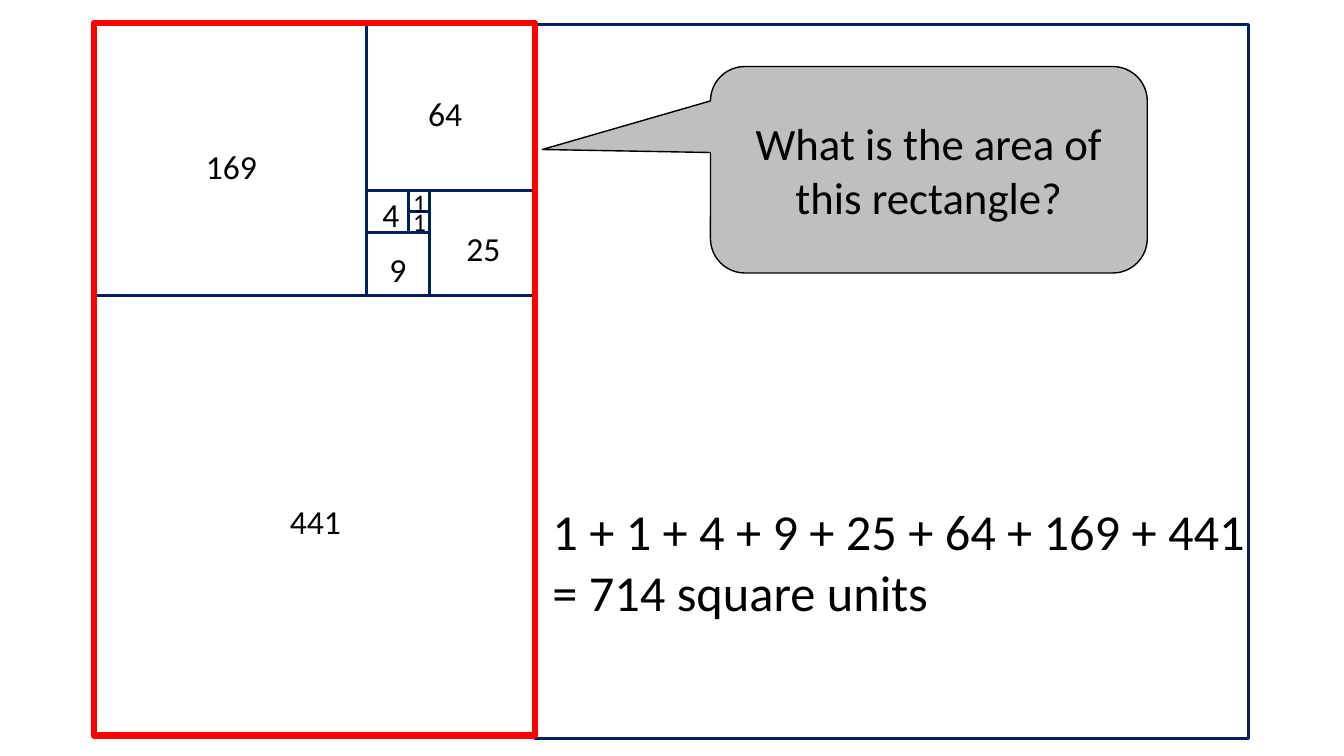
from pptx import Presentation
from pptx.dml.color import RGBColor
from pptx.enum.shapes import MSO_SHAPE
from pptx.enum.text import MSO_ANCHOR, PP_ALIGN
from pptx.util import Pt

RECT = MSO_SHAPE.RECTANGLE
CALLOUT = MSO_SHAPE.ROUNDED_RECTANGULAR_CALLOUT
MIDDLE = MSO_ANCHOR.MIDDLE
LEFT, CENTER = PP_ALIGN.LEFT, PP_ALIGN.CENTER

NAVY, RED, WHITE, GREY, BLACK = "002060", "FF0000", "FFFFFF", "BFBFBF", "000000"
UNIT = 15

# side, column, row, line
SQUARES = [
    (1, 15, 9, RED),
    (1, 15, 8, NAVY),
    (2, 13, 8, NAVY),
    (3, 13, 10, NAVY),
    (5, 16, 8, NAVY),
    (8, 13, 0, NAVY),
    (13, 0, 0, NAVY),
    (21, 0, 13, NAVY),
    (34, 21, 0.1, NAVY),
]
AREA_LABELS = [
    (1, 221, 128, 25, 18, LEFT),
    (1, 221, 114, 25, 18, LEFT),
    (2, 199, 119, 40, 24, LEFT),
    (3, 204, 158, 40, 24, LEFT),
    (5, 259, 143, 56, 24, LEFT),
    (8, 218, 47, 66, 24, CENTER),
    (13, 73, 85, 76, 24, LEFT),
    (21, 133, 338, 76, 24, LEFT),
]


def rgb(value):
    return RGBColor.from_string(value)


def write(sp, text, size, align=LEFT):
    tf = sp.text_frame
    tf.word_wrap = True
    p = tf.paragraphs[0]
    p.alignment = align
    r = p.add_run()
    r.text = text
    for name, value in {"name": "Calibri", "size": Pt(size)}.items():
        setattr(r.font, name, value)
    r.font.color.rgb = rgb(BLACK)


def add_label(s, x, y, w, h, text, size, align=LEFT):
    sp = s.shapes.add_textbox(Pt(x), Pt(y), Pt(w), Pt(h))
    write(sp, text, size, align)


def add_outline(s, kind, x, y, w, h, line, weight, fill=None):
    sp = s.shapes.add_shape(kind, Pt(x), Pt(y), Pt(w), Pt(h))
    sp.shadow.inherit = False
    if fill:
        sp.fill.solid()
        sp.fill.fore_color.rgb = rgb(fill)
    else:
        sp.fill.background()
    sp.line.color.rgb = rgb(line)
    sp.line.width = Pt(weight)
    return sp


def add_spiral(s, x, y):
    for side, col, row, line in SQUARES:
        add_outline(s, RECT, x + col * UNIT, y + row * UNIT,
                    side * UNIT, side * UNIT, line, 2.25, WHITE)
    for side, dx, dy, w, size, align in AREA_LABELS:
        add_label(s, x + dx, y + dy, w, size * 1.5, str(side ** 2), size, align)
    add_outline(s, RECT, x, y + 0.5, 21 * UNIT, 34 * UNIT - 1, RED, 4.5)


def add_question(s, x, y, w, h):
    sp = add_outline(s, CALLOUT, x, y, w, h, BLACK, 1, GREY)
    for i, value in enumerate((-0.885, -0.098, 0.167)):
        sp.adjustments[i] = value
    sp.text_frame.vertical_anchor = MIDDLE
    write(sp, "What is the area of this rectangle?", 32, CENTER)


def main():
    prs = Presentation()
    prs.slide_width, prs.slide_height = Pt(960), Pt(540)
    s = prs.slides.add_slide(prs.slide_layouts[6])
    add_spiral(s, 67, 16)
    add_question(s, 507.5, 47.5, 312, 147.5)
    add_label(s, 387.5, 354, 523.5, 94.5,
              "1 + 1 + 4 + 9 + 25 + 64 + 169 + 441 = 714 square units", 36)
    prs.save("out.pptx")


if __name__ == "__main__":
    main()
